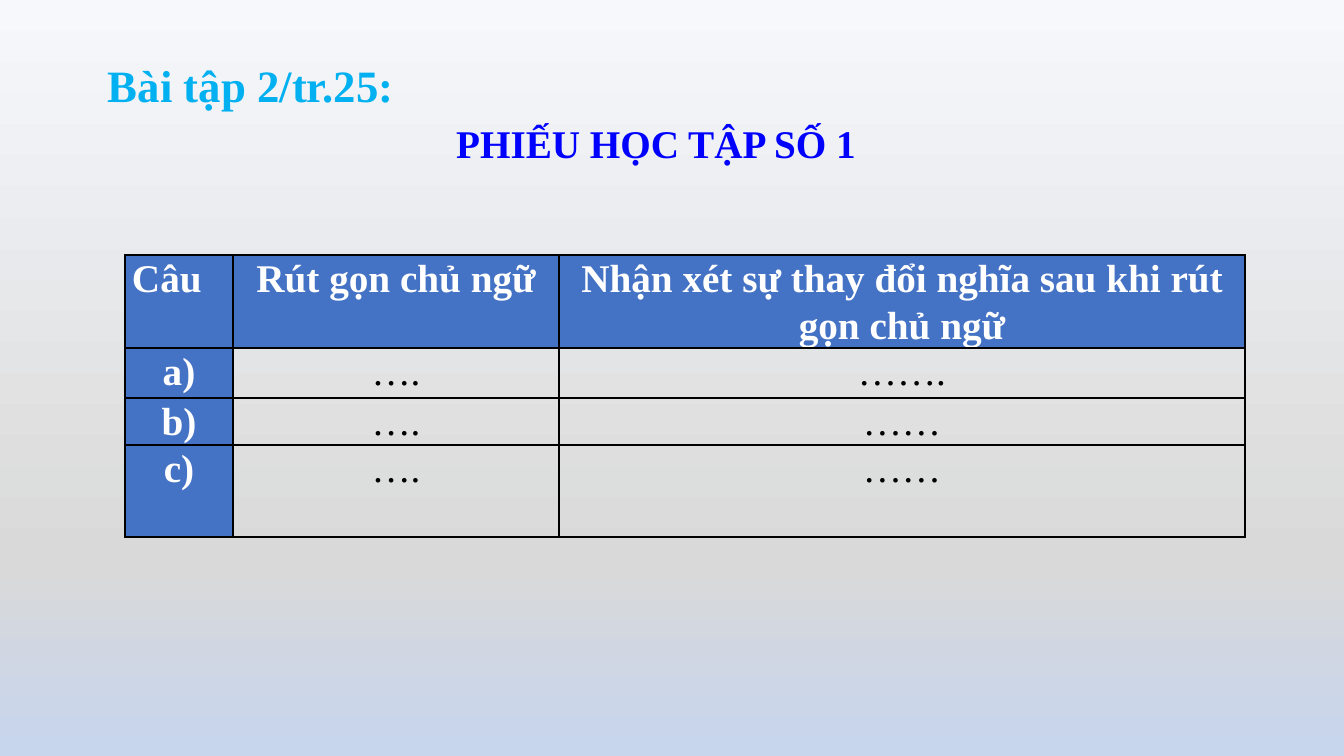
from copy import deepcopy
from dataclasses import dataclass

from lxml.etree import SubElement
from pptx import Presentation
from pptx.dml.color import RGBColor
from pptx.enum.text import MSO_ANCHOR, MSO_AUTO_SIZE, PP_ALIGN
from pptx.oxml.ns import qn
from pptx.slide import Slide
from pptx.table import _Cell
from pptx.text.text import _Paragraph
from pptx.util import Emu, Pt

EMU_PER_PX = 914400 / 100.8
FONT = "Times New Roman"
BLUE, WHITE, BLACK = "4472C4", "FFFFFF", "000000"
BACKDROP = [(0, "F6F8FC"), (0.74, "D9D9D9"), (1, "C7D5ED")]
COLUMN_WIDTHS = [108, 326, 686]
ROW_HEIGHTS = [93, 50, 47, 92]
WORKSHEET = [
    ["Câu", "Rút gọn chủ ngữ", "Nhận xét sự thay đổi nghĩa sau khi rút gọn chủ ngữ"],
    ["a)", "….", "……."],
    ["b)", "….", "……"],
    ["c)", "….", "……"],
]


@dataclass
class Heading:
    text: str
    left: int
    top: int
    width: int
    height: int
    size: int
    color: str
    align: PP_ALIGN
    line_spacing: float
    anchor: MSO_ANCHOR
    wrap: bool


HEADINGS = [
    Heading("PHIẾU HỌC TẬP SỐ 1", 444, 114, 424, 57, 28, "0000FF",
            PP_ALIGN.CENTER, 1.0, MSO_ANCHOR.MIDDLE, False),
    Heading("Bài tập 2/tr.25:", 98, 26, 313, 92, 32, "00B0F0",
            PP_ALIGN.JUSTIFY, 1.5, MSO_ANCHOR.TOP, True),
]


def px(length: int) -> Emu:
    return Emu(round(length * EMU_PER_PX))


def rgb(color: str) -> RGBColor:
    return RGBColor.from_string(color)


def write(paragraph: _Paragraph, text: str, size: int, color: str, bold: bool,
          align: PP_ALIGN, line_spacing: float) -> None:
    paragraph.alignment = align
    paragraph.line_spacing = line_spacing
    run = paragraph.add_run()
    run.text = text
    run.font.name = FONT
    run.font.size = Pt(size)
    run.font.bold = bold
    run.font.color.rgb = rgb(color)


def paint_backdrop(slide: Slide) -> None:
    fill = slide.background.fill
    fill.gradient()
    fill.gradient_angle = 270
    stops = slide.element.find(".//" + qn("a:gsLst"))
    stops.append(deepcopy(stops[-1]))
    for stop, (position, color) in zip(fill.gradient_stops, BACKDROP):
        stop.position = position
        stop.color.rgb = rgb(color)


def add_heading(slide: Slide, heading: Heading) -> None:
    box = slide.shapes.add_textbox(px(heading.left), px(heading.top),
                                   px(heading.width), px(heading.height))
    frame = box.text_frame
    frame.word_wrap = heading.wrap
    frame.auto_size = MSO_AUTO_SIZE.SHAPE_TO_FIT_TEXT
    frame.vertical_anchor = heading.anchor
    write(frame.paragraphs[0], heading.text, heading.size, heading.color, True,
          heading.align, heading.line_spacing)


def outline(cell: _Cell) -> None:
    properties = cell._tc.get_or_add_tcPr()
    for side in ("a:lnL", "a:lnR", "a:lnT", "a:lnB"):
        line = SubElement(properties, qn(side), w=str(Pt(1)))
        SubElement(SubElement(line, qn("a:solidFill")), qn("a:srgbClr"), val=BLACK)


def fill_cell(cell: _Cell, text: str, is_label: bool, align: PP_ALIGN) -> None:
    cell.margin_left = cell.margin_right = px(7)
    cell.margin_top = cell.margin_bottom = 0
    outline(cell)
    if is_label:
        cell.fill.solid()
        cell.fill.fore_color.rgb = rgb(BLUE)
    else:
        cell.fill.background()
    write(cell.text_frame.paragraphs[0], text, 28, WHITE if is_label else BLACK,
          is_label, align, 1.07)


def add_worksheet(slide: Slide) -> None:
    table = slide.shapes.add_table(
        len(ROW_HEIGHTS), len(COLUMN_WIDTHS), px(125), px(255),
        px(sum(COLUMN_WIDTHS)), px(sum(ROW_HEIGHTS))).table
    table.first_row = table.horz_banding = False
    for column, width in zip(table.columns, COLUMN_WIDTHS):
        column.width = px(width)
    for row, height in zip(table.rows, ROW_HEIGHTS):
        row.height = px(height)
    for r, texts in enumerate(WORKSHEET):
        for c, text in enumerate(texts):
            align = PP_ALIGN.LEFT if r == c == 0 else PP_ALIGN.CENTER
            fill_cell(table.cell(r, c), text, r == 0 or c == 0, align)


def main() -> None:
    presentation = Presentation()
    presentation.slide_width = px(1344)
    presentation.slide_height = px(756)
    slide = presentation.slides.add_slide(presentation.slide_layouts[6])
    paint_backdrop(slide)
    add_worksheet(slide)
    for heading in HEADINGS:
        add_heading(slide, heading)
    presentation.save("out.pptx")


if __name__ == "__main__":
    main()
